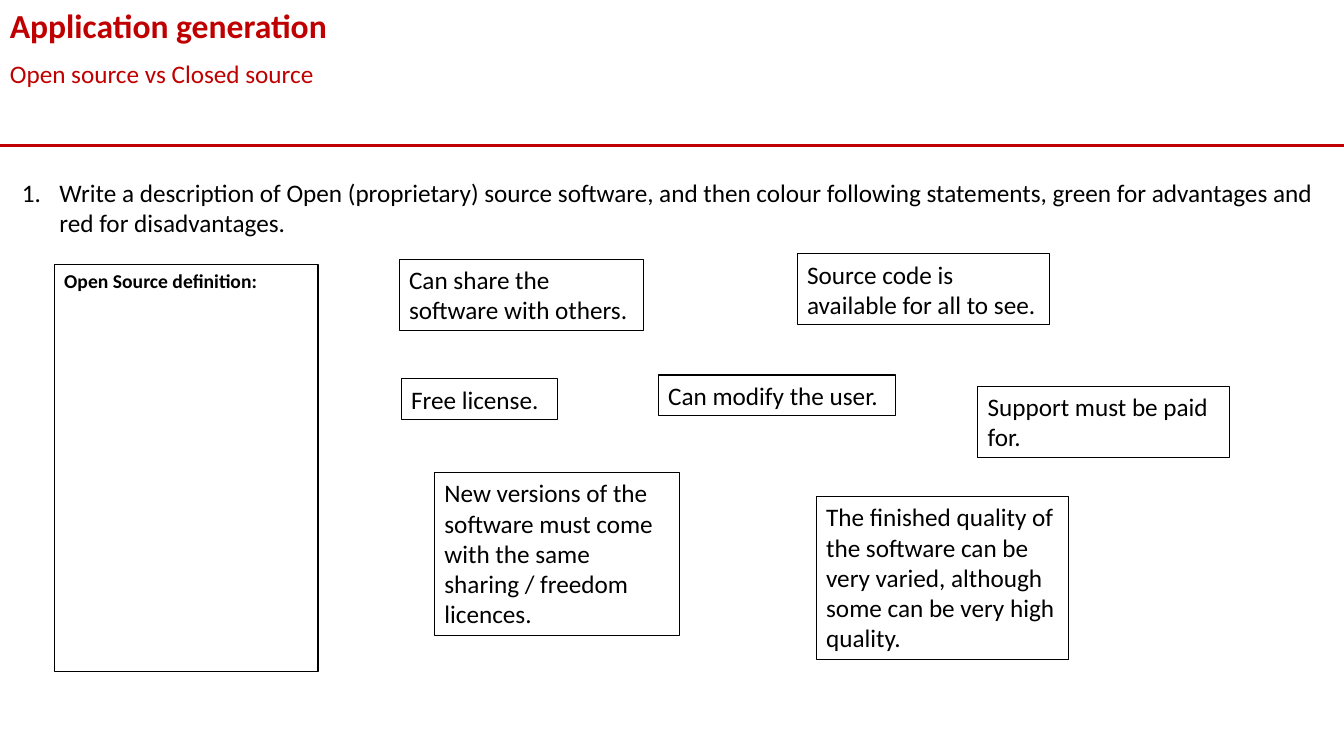
import pptx
import pptx.util
import pptx.dml.color
import pptx.enum.shapes
import pptx.enum.text
from lxml import etree
from pptx.util import Cm, Pt

# Content
TITLE = "Application generation"
SUBTITLE = "Open source vs Closed source"
TASK = ("Write a description of Open (proprietary) source software, and then colour "
        "following statements, green for advantages and red for disadvantages.")
DEFINITION = "Open Source definition:"
# Statement, left, top, width in cm, number of text lines
STATEMENTS = [
    ("Free license.", 10.11, 9.55, 3.94, 1),
    ("Source code is available for all to see.", 20.09, 6.4, 6.35, 2),
    ("Can modify the user.", 16.59, 9.45, 5.99, 1),
    ("Can share the software with others.", 10.06, 6.53, 6.17, 2),
    ("New versions of the software must come with the same sharing / freedom licences.",
     10.95, 11.91, 6.17, 5),
    ("Support must be paid for.", 24.64, 9.73, 6.35, 2),
    ("The finished quality of the software can be very varied, although some can be "
     "very high quality.", 20.57, 12.52, 6.35, 5),
]

# Style and measures in cm
RED, BLACK, WHITE = "C00000", "000000", "FFFFFF"
SLIDE_WIDTH, SLIDE_HEIGHT = 33.87, 19.05
RULE_TOP = 3.66
LINE_HEIGHT, BOX_PADDING = 0.77, 0.25
NUMBER_INDENT = 0.95

presentation = pptx.Presentation()
presentation.slide_width = Cm(SLIDE_WIDTH)
presentation.slide_height = Cm(SLIDE_HEIGHT)
slide = presentation.slides.add_slide(presentation.slide_layouts[6])


def color(value):
    return pptx.dml.color.RGBColor.from_string(value)


def add_text(text, left, top, width, height, size=18, ink=BLACK, bold=False,
             border=None, numbered=False):
    """Add text in a plain box, or in a bordered rectangle if border is given."""
    place = Cm(left), Cm(top), Cm(width), Cm(height)
    if border:
        shape = slide.shapes.add_shape(pptx.enum.shapes.MSO_SHAPE.RECTANGLE, *place)
        shape.shadow.inherit = False
        shape.fill.solid()
        shape.fill.fore_color.rgb = color(WHITE)
        shape.line.color.rgb = color(BLACK)
        shape.line.width = Pt(border)
    else:
        shape = slide.shapes.add_textbox(*place)
    frame = shape.text_frame
    frame.word_wrap = True
    frame.vertical_anchor = pptx.enum.text.MSO_ANCHOR.TOP
    paragraph = frame.paragraphs[0]
    paragraph.alignment = pptx.enum.text.PP_ALIGN.LEFT
    if numbered:
        properties = paragraph._p.get_or_add_pPr()
        properties.set("marL", str(Cm(NUMBER_INDENT)))
        properties.set("indent", str(-Cm(NUMBER_INDENT)))
        number = etree.SubElement(properties, pptx.oxml.ns.qn("a:buAutoNum"))
        number.set("type", "arabicPeriod")
    run = paragraph.add_run()
    run.text = text
    run.font.name = "Calibri"
    run.font.size = Pt(size)
    run.font.bold = bold
    run.font.color.rgb = color(ink)
    return shape


# Header
rule = slide.shapes.add_connector(pptx.enum.shapes.MSO_CONNECTOR.STRAIGHT,
                                  0, Cm(RULE_TOP), Cm(SLIDE_WIDTH), Cm(RULE_TOP))
rule.line.color.rgb = color(RED)
rule.line.width = Pt(2.25)
etree.SubElement(rule._element.spPr, pptx.oxml.ns.qn("a:effectLst"))
add_text(SUBTITLE, 0, 1.35, SLIDE_WIDTH, 1.02, ink=RED)
add_text(TITLE, 0, 0, SLIDE_WIDTH, 1.28, size=24, ink=RED, bold=True)

# Task and definition
add_text(TASK, 0.3, 4.34, 33.2, 1.8, numbered=True)
add_text(DEFINITION, 1.37, 6.66, 6.65, 10.27, size=14, bold=True, border=1)

# Statements to colour
for statement, left, top, width, lines in STATEMENTS:
    add_text(statement, left, top, width, BOX_PADDING + lines * LINE_HEIGHT, border=0.75)

presentation.save("out.pptx")
